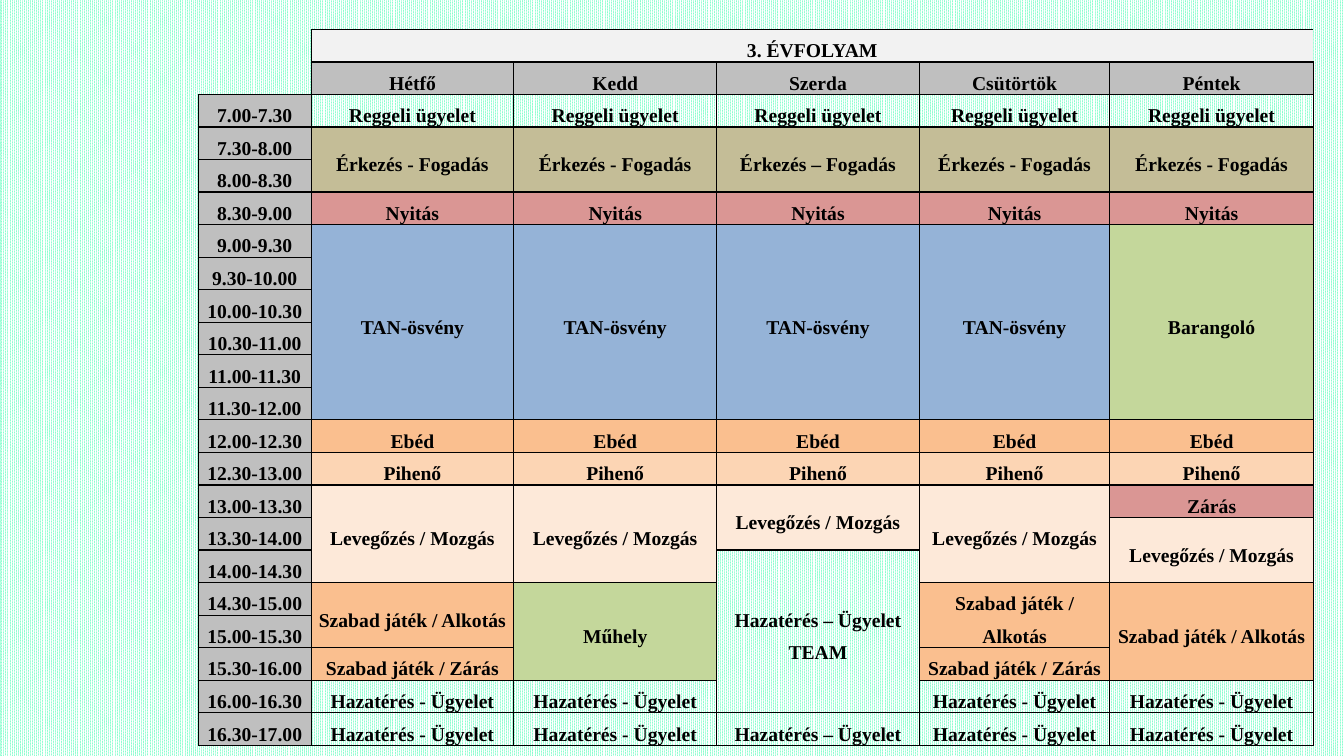
"""Build the weekly timetable slide for the third grade."""
from lxml import etree
from pptx import Presentation, util as u
from pptx.dml.color import RGBColor
from pptx.enum import dml, text
from pptx.oxml import ns

rgb = RGBColor.from_string
BLACK, GREY = "000000", "BFBFBF"


def add_edges(cell, sides):
    properties = cell._tc.get_or_add_tcPr()
    for side in sides:
        line = etree.SubElement(properties, ns.qn(f"a:ln{side}"), w=str(u.Pt(1)))
        fill = etree.SubElement(line, ns.qn("a:solidFill"))
        etree.SubElement(fill, ns.qn("a:srgbClr"), val=BLACK)


def write_block(content, row, column, rows=1, columns=1, fill=None,
                anchor=text.MSO_ANCHOR.MIDDLE):
    last_row, last_column = row + rows - 1, column + columns - 1
    for r in range(row, last_row + 1):
        for c in range(column, last_column + 1):
            outer = {"L": c == column, "R": c == last_column,
                     "T": r == row, "B": r == last_row}
            add_edges(table.cell(r, c), [side for side in outer if outer[side]])
    cell = table.cell(row, column)
    if rows * columns > 1:
        cell.merge(table.cell(last_row, last_column))
    if fill:
        cell.fill.solid()
        cell.fill.fore_color.rgb = rgb(fill)
    else:
        cell.fill.background()
    cell.vertical_anchor = anchor
    cell.margin_left = cell.margin_right = u.Cm(0.08)
    cell.text = content
    for paragraph in cell.text_frame.paragraphs:
        paragraph.alignment = text.PP_ALIGN.CENTER
        paragraph.line_spacing = 1.5
        font = paragraph.runs[0].font
        font.name, font.size, font.bold = "Times New Roman", u.Pt(14), True
        font.color.rgb = rgb(BLACK)


ACTIVITY_FILLS = {
    "Érkezés - Fogadás": "C4BD97",
    "Érkezés – Fogadás": "C4BD97",
    "Nyitás": "DA9694",
    "Zárás": "DA9694",
    "TAN-ösvény": "95B3D7",
    "Barangoló": "C4D79B",
    "Műhely": "C4D79B",
    "Ebéd": "FABF8F",
    "Szabad játék / Alkotás": "FABF8F",
    "Szabad játék / Zárás": "FABF8F",
    "Pihenő": "FCD5B4",
    "Levegőzés / Mozgás": "FDE9D9",
}
LONG_AFTERNOON = [("Levegőzés / Mozgás", 3), ("Szabad játék / Alkotás", 2),
                  ("Szabad játék / Zárás", 1)]
GOING_HOME = [("Hazatérés - Ügyelet", 1)] * 2
DAYS = [
    ("Hétfő", "Érkezés - Fogadás", "TAN-ösvény", LONG_AFTERNOON + GOING_HOME),
    ("Kedd", "Érkezés - Fogadás", "TAN-ösvény",
     [("Levegőzés / Mozgás", 3), ("Műhely", 3)] + GOING_HOME),
    ("Szerda", "Érkezés – Fogadás", "TAN-ösvény",
     [("Levegőzés / Mozgás", 2), ("Hazatérés – Ügyelet\nTEAM", 5),
      ("Hazatérés – Ügyelet", 1)]),
    ("Csütörtök", "Érkezés - Fogadás", "TAN-ösvény", LONG_AFTERNOON + GOING_HOME),
    ("Péntek", "Érkezés - Fogadás", "Barangoló",
     [("Zárás", 1), ("Levegőzés / Mozgás", 2),
      ("Szabad játék / Alkotás", 3)] + GOING_HOME),
]
COLUMN_WIDTHS = [2.84, 5.11, 5.11, 5.11, 4.8, 5.13]
HEADER_ROWS, HALF_HOURS, ROW_HEIGHT = 2, 20, 0.76

presentation = Presentation()
presentation.slide_width, presentation.slide_height = u.Cm(33.87), u.Cm(19.05)
slide = presentation.slides.add_slide(presentation.slide_layouts[6])
background = slide.background.fill
background.patterned()
background.pattern = dml.MSO_PATTERN.PERCENT_90
background.fore_color.rgb = rgb("FFFFFF")
background.back_color.rgb = rgb("88FECE")

row_count = HEADER_ROWS + HALF_HOURS
table = slide.shapes.add_table(
    row_count, len(COLUMN_WIDTHS), u.Cm(5), u.Cm(0.74),
    u.Cm(sum(COLUMN_WIDTHS)), u.Cm(row_count * ROW_HEIGHT)).table
table.first_row = table.horz_banding = False
style = table._tbl.tblPr.find(ns.qn("a:tableStyleId"))
style.text = "{2D5ABB26-0587-4C30-8999-92F81FD0307C}"
for column, width in zip(table.columns, COLUMN_WIDTHS):
    column.width = u.Cm(width)
for row in table.rows:
    row.height = u.Cm(ROW_HEIGHT)
for cell in table.iter_cells():
    cell.margin_left = cell.margin_right = cell.margin_top = cell.margin_bottom = 0

add_edges(table.cell(0, 0), "R")
add_edges(table.cell(1, 0), "RB")
write_block("3. ÉVFOLYAM", 0, 1, columns=len(DAYS), fill="F2F2F2",
            anchor=text.MSO_ANCHOR.BOTTOM)

times = [f"{7 + half // 2}.{half % 2 * 30:02d}" for half in range(HALF_HOURS + 1)]
for row, (start, end) in enumerate(zip(times, times[1:]), HEADER_ROWS):
    write_block(f"{start}-{end}", row, 0, fill=GREY, anchor=text.MSO_ANCHOR.BOTTOM)

for column, (day, arrival, lesson, afternoon) in enumerate(DAYS, 1):
    write_block(day, 1, column, fill=GREY, anchor=text.MSO_ANCHOR.BOTTOM)
    morning = [("Reggeli ügyelet", 1), (arrival, 2), ("Nyitás", 1),
               (lesson, 6), ("Ebéd", 1), ("Pihenő", 1)]
    row = HEADER_ROWS
    for activity, rows in morning + afternoon:
        write_block(activity, row, column, rows, fill=ACTIVITY_FILLS.get(activity))
        row += rows

presentation.save("out.pptx")
